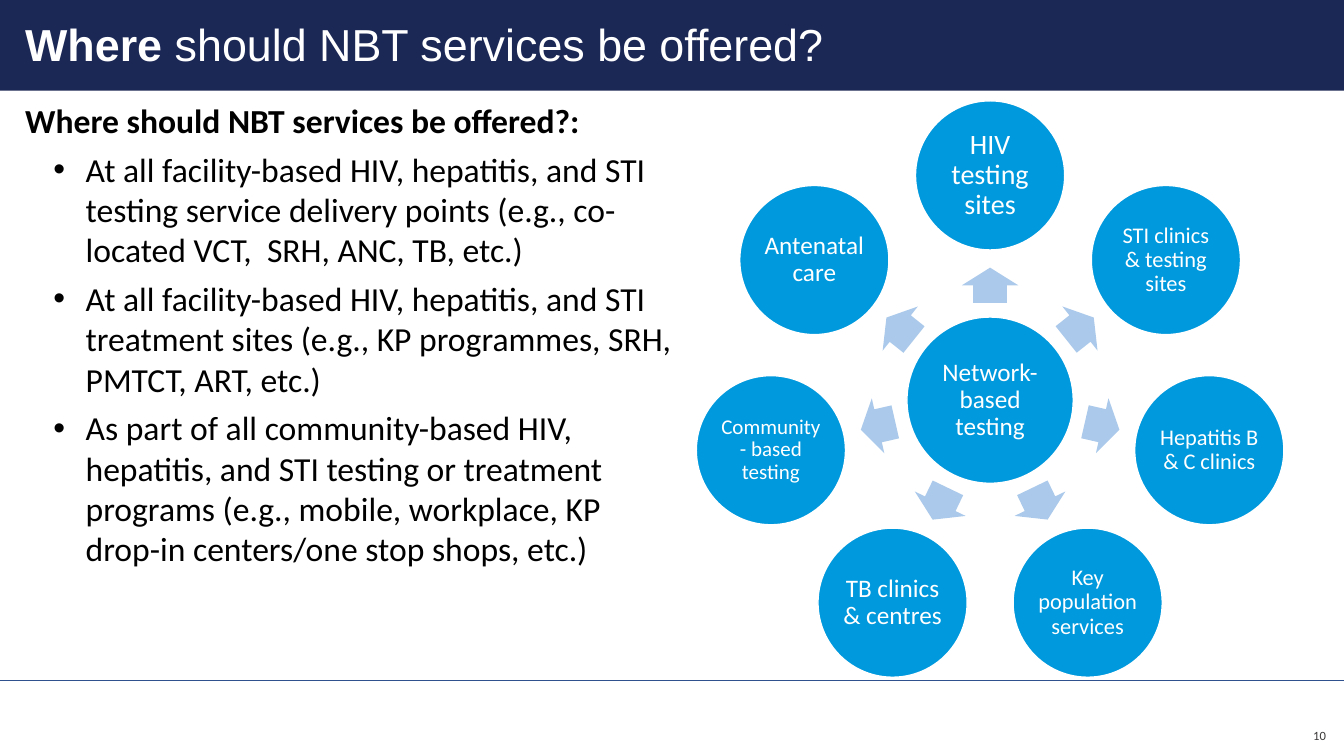
"""Build the slide on where network-based testing services should be offered."""

from dataclasses import dataclass
from math import cos, radians, sin

from lxml.etree import SubElement
from pptx import Presentation
from pptx.dml.color import RGBColor
from pptx.enum.shapes import MSO_CONNECTOR, MSO_SHAPE
from pptx.enum.text import MSO_ANCHOR, MSO_AUTO_SIZE, PP_ALIGN
from pptx.oxml.ns import qn
from pptx.slide import Slide
from pptx.text.text import TextFrame, _Paragraph
from pptx.util import Emu, Pt

PX = 9144
SLIDE_WIDTH, SLIDE_HEIGHT = 1333, 750
HUB_X, HUB_Y, HUB_DIAMETER = 982, 397, 165
SITE_DIAMETER, SITE_ORBIT = 148, 223
ARROW_LENGTH, ARROW_BREADTH, ARROW_ORBIT = 35, 56, 114


@dataclass(frozen=True)
class Theme:
    """Colours, fonts and type sizes of the slide."""

    navy: RGBColor = RGBColor.from_string("1B2755")
    rule: RGBColor = RGBColor.from_string("2F528F")
    circle: RGBColor = RGBColor.from_string("0099DD")
    arrow: RGBColor = RGBColor.from_string("ABCAEB")
    white: RGBColor = RGBColor.from_string("FFFFFF")
    black: RGBColor = RGBColor.from_string("000000")
    gray: RGBColor = RGBColor.from_string("3B3838")
    title_font: str = "Arial"
    body_font: str = "Calibri"
    title_size: int = 32
    body_size: int = 24
    number_size: int = 9
    hub_size: int = 18


@dataclass(frozen=True)
class Site:
    """A place that offers testing, with its type size and inset."""

    label: str
    size: int
    inset: int = 2


THEME = Theme()
TITLE_LEAD, TITLE_REST = "Where", " should NBT services be offered?"
BODY_HEADING = "Where should NBT services be offered?:"
BODY_POINTS = (
    "At all facility-based HIV, hepatitis, and STI testing service delivery points "
    "(e.g., co-located VCT,  SRH, ANC, TB, etc.)",
    "At all facility-based HIV, hepatitis, and STI treatment sites "
    "(e.g., KP programmes, SRH, PMTCT, ART, etc.)",
    "As part of all community-based HIV, hepatitis, and STI testing or treatment programs "
    "(e.g., mobile, workplace, KP drop-in centers/one stop shops, etc.)",
)
HUB = Site("Network-based testing", THEME.hub_size, 3)
SITES = (
    Site("HIV testing sites", 20, 3),
    Site("STI clinics & testing sites", 16),
    Site("Hepatitis B & C clinics", 16),
    Site("Key population services", 16),
    Site("TB clinics & centres", 18, 3),
    Site("Community - based testing", 15),
    Site("Antenatal care", 18, 3),
)


def px(*lengths: float) -> list[Emu]:
    """Turn pixel lengths into EMU."""
    return [Emu(round(length * PX)) for length in lengths]


def set_font(paragraph: _Paragraph, name: str, size: int, color: RGBColor, bold: bool = False) -> None:
    """Set the font of a whole paragraph."""
    font = paragraph.font
    font.name, font.size, font.bold = name, Pt(size), bold
    font.color.rgb = color


def set_frame(frame: TextFrame, inset: int, anchor: MSO_ANCHOR) -> None:
    """Set wrapping, equal insets and the anchor of a text frame."""
    frame.word_wrap = True
    frame.vertical_anchor = anchor
    (margin,) = px(inset)
    frame.margin_left = frame.margin_right = frame.margin_top = frame.margin_bottom = margin


def add_band(slide: Slide) -> None:
    """Draw the band behind the title."""
    band = slide.shapes.add_shape(MSO_SHAPE.RECTANGLE, *px(0, 0, SLIDE_WIDTH, 90))
    band.shadow.inherit = False
    band.fill.solid()
    band.fill.fore_color.rgb = THEME.navy
    band.line.fill.background()


def add_title(slide: Slide) -> None:
    """Place the title in front of the band."""
    title = slide.shapes.title
    title.left, title.top, title.width, title.height = px(25, 17, 1279, 54)
    set_frame(title.text_frame, 0, MSO_ANCHOR.TOP)
    title.text_frame.auto_size = MSO_AUTO_SIZE.NONE
    paragraph = title.text_frame.paragraphs[0]
    paragraph.alignment = PP_ALIGN.LEFT
    set_font(paragraph, THEME.title_font, THEME.title_size, THEME.white)
    lead = paragraph.add_run()
    lead.text, lead.font.bold = TITLE_LEAD, True
    paragraph.add_run().text = TITLE_REST
    slide.shapes._spTree.append(title._element)


def add_footer(slide: Slide) -> None:
    """Draw the footer rule and the slide number."""
    rule = slide.shapes.add_connector(MSO_CONNECTOR.STRAIGHT, *px(0, 675, SLIDE_WIDTH, 675))
    rule.line.color.rgb = THEME.rule
    rule.line.width = Pt(0.5)
    SubElement(rule._element.spPr, qn("a:effectLst"))
    frame = slide.shapes.add_textbox(*px(1261, 710, 64, 40)).text_frame
    set_frame(frame, 10, MSO_ANCHOR.MIDDLE)
    paragraph = frame.paragraphs[0]
    paragraph.text = "10"
    paragraph.alignment = PP_ALIGN.RIGHT
    set_font(paragraph, THEME.body_font, THEME.number_size, THEME.gray)


def add_bullet(paragraph: _Paragraph) -> None:
    """Give a paragraph a hanging bullet."""
    properties = paragraph._p.get_or_add_pPr()
    indent, hang = px(60, -32)
    properties.set("marL", str(indent))
    properties.set("indent", str(hang))
    SubElement(properties, qn("a:buFont"), typeface="Arial")
    SubElement(properties, qn("a:buChar"), char="•")


def add_body(slide: Slide) -> None:
    """Write the heading and its bulleted points."""
    frame = slide.shapes.add_textbox(*px(25, 99, 646, 518)).text_frame
    set_frame(frame, 0, MSO_ANCHOR.TOP)
    for index, text in enumerate((BODY_HEADING, *BODY_POINTS)):
        paragraph = frame.add_paragraph() if index else frame.paragraphs[0]
        paragraph.text = text
        paragraph.space_after = Pt(6)
        if index:
            add_bullet(paragraph)
        set_font(paragraph, THEME.body_font, THEME.body_size, THEME.black, bold=not index)


def add_circle(slide: Slide, site: Site, x: float, y: float, diameter: int) -> None:
    """Draw a labelled circle around a centre."""
    left, top = x - diameter / 2, y - diameter / 2
    circle = slide.shapes.add_shape(MSO_SHAPE.OVAL, *px(left, top, diameter, diameter))
    circle.shadow.inherit = False
    circle.fill.solid()
    circle.fill.fore_color.rgb = THEME.circle
    circle.line.color.rgb = THEME.white
    circle.line.width = Pt(1)
    set_frame(circle.text_frame, site.inset, MSO_ANCHOR.MIDDLE)
    paragraph = circle.text_frame.paragraphs[0]
    paragraph.text = site.label
    paragraph.alignment = PP_ALIGN.CENTER
    paragraph.line_spacing = 0.9
    set_font(paragraph, THEME.body_font, site.size, THEME.white)


def add_arrow(slide: Slide, x: float, y: float, angle: float) -> None:
    """Draw a block arrow around a centre, turned to an angle."""
    left, top = x - ARROW_LENGTH / 2, y - ARROW_BREADTH / 2
    arrow = slide.shapes.add_shape(MSO_SHAPE.RIGHT_ARROW, *px(left, top, ARROW_LENGTH, ARROW_BREADTH))
    arrow.shadow.inherit = False
    arrow.adjustments[0], arrow.adjustments[1] = 0.6, 0.5
    arrow.rotation = angle
    arrow.fill.solid()
    arrow.fill.fore_color.rgb = THEME.arrow
    arrow.line.fill.background()


def add_wheel(slide: Slide) -> None:
    """Draw the hub with its sites spread evenly around it."""
    add_circle(slide, HUB, HUB_X, HUB_Y, HUB_DIAMETER)
    for index, site in enumerate(SITES):
        angle = (270 + index * 360 / len(SITES)) % 360
        across, down = cos(radians(angle)), sin(radians(angle))
        add_arrow(slide, HUB_X + ARROW_ORBIT * across, HUB_Y + ARROW_ORBIT * down, angle)
        add_circle(slide, site, HUB_X + SITE_ORBIT * across, HUB_Y + SITE_ORBIT * down, SITE_DIAMETER)


def main() -> None:
    """Build and save the presentation."""
    presentation = Presentation()
    presentation.slide_width, presentation.slide_height = px(SLIDE_WIDTH, SLIDE_HEIGHT)
    slide = presentation.slides.add_slide(presentation.slide_layouts[5])
    add_band(slide)
    add_footer(slide)
    add_body(slide)
    add_title(slide)
    add_wheel(slide)
    presentation.save("out.pptx")


if __name__ == "__main__":
    main()
